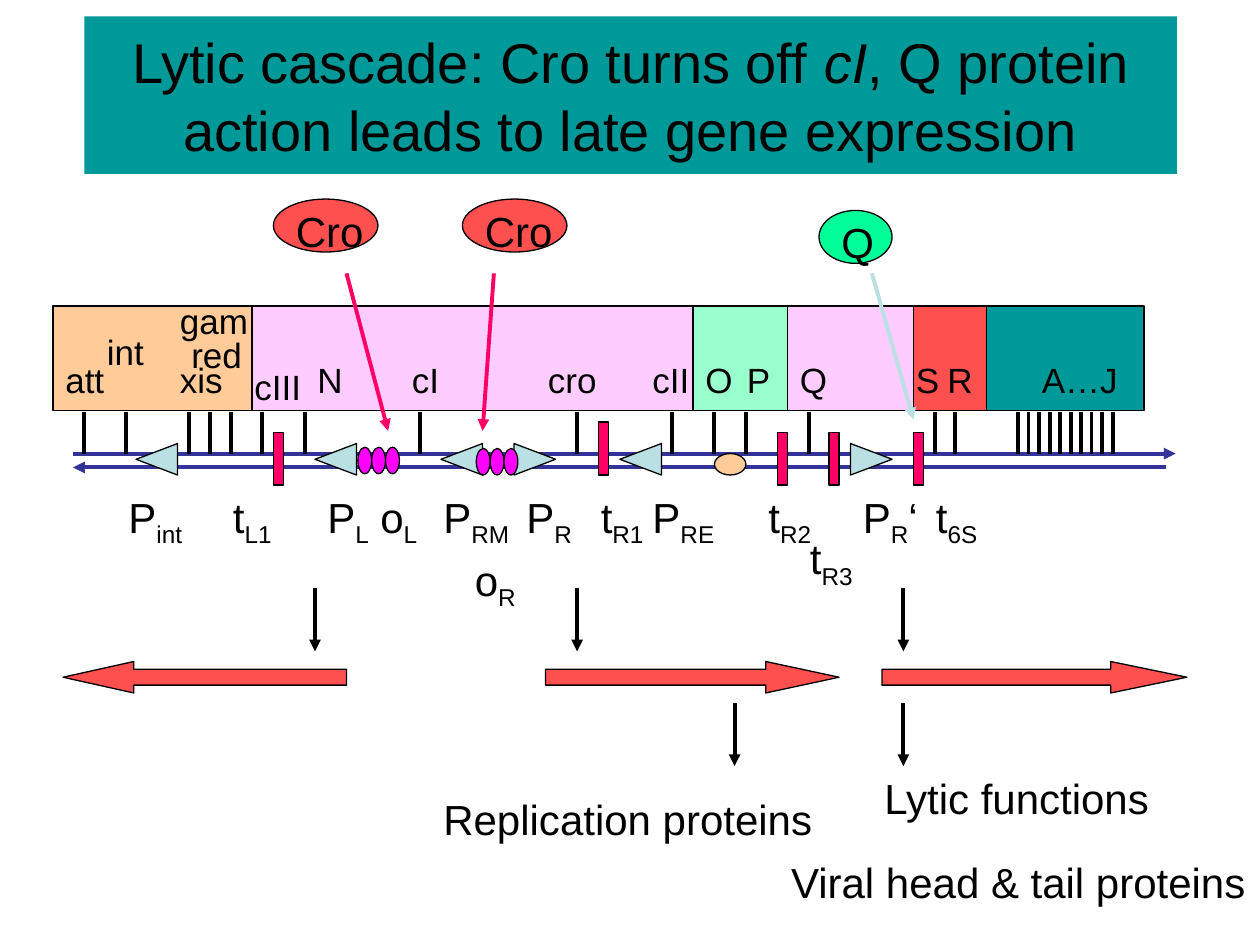
from dataclasses import dataclass

from lxml import etree
from pptx import Presentation
from pptx import util as u
from pptx.dml import color
from pptx.enum import shapes, text
from pptx.oxml import ns

COLORS = {
    "black": "000000", "teal": "009999", "pink": "FFCCFF", "mint": "99FFCC",
    "red": "FF5050", "peach": "FFCC99", "navy": "333399", "pale": "BBE0E3",
    "rose": "FF0066", "magenta": "FF00FF", "green": "00FF99",
}
FONT = "Arial"
SHAPE = shapes.MSO_SHAPE
STRAND_Y = 3.6
GENE_TOP, GENE_HEIGHT = 2.43, 0.83
GENE_SLACK = 0.02  # spare width that keeps each gene name on one line


@dataclass
class Label:
    left: float
    top: float
    width: float
    base: str
    sub: str = ""
    suffix: str = ""
    size: int = 24


@dataclass
class Block:
    left: float
    top: float
    width: float
    height: float
    fill: str
    kind: shapes.MSO_SHAPE = SHAPE.RECTANGLE
    rotation: int = 0
    outlined: bool = True


@dataclass
class Stroke:
    start: tuple[float, float]
    end: tuple[float, float]
    color: str = "black"
    arrow: bool = True


def rgb(name: str) -> color.RGBColor:
    return color.RGBColor.from_string(COLORS[name])


def add_span(para, words: str, size: int, baseline: int = 0, italic: bool = False) -> None:
    span = para.add_run()
    span.text = words
    span.font.name = FONT
    span.font.size = u.Pt(size)
    span.font.color.rgb = rgb("black")
    if italic:
        span.font.italic = True
    if baseline:
        span.font._element.set("baseline", str(baseline))


def draw_label(page, label: Label) -> None:
    height = 0.5 if label.size == 24 else 0.43
    box = page.shapes.add_textbox(u.Inches(label.left), u.Inches(label.top),
                                  u.Inches(label.width), u.Inches(height))
    frame = box.text_frame
    frame.word_wrap = False
    frame.auto_size = text.MSO_AUTO_SIZE.SHAPE_TO_FIT_TEXT
    para = frame.paragraphs[0]
    for words, baseline in ((label.base, 0), (label.sub, -25000), (label.suffix, 0)):
        if words:
            add_span(para, words, label.size, baseline)


def draw_block(page, block: Block):
    shape = page.shapes.add_shape(block.kind, u.Inches(block.left), u.Inches(block.top),
                                  u.Inches(block.width), u.Inches(block.height))
    shape.shadow.inherit = False
    shape.rotation = block.rotation
    shape.fill.solid()
    shape.fill.fore_color.rgb = rgb(block.fill)
    if block.outlined:
        shape.line.color.rgb = rgb("black")
        shape.line.width = u.Pt(0.75)
    else:
        shape.line.fill.background()
    return shape


def draw_stroke(page, stroke: Stroke) -> None:
    points = [u.Inches(value) for value in (*stroke.start, *stroke.end)]
    connector = page.shapes.add_connector(shapes.MSO_CONNECTOR.STRAIGHT, *points)
    connector.line.color.rgb = rgb(stroke.color)
    connector.line.width = u.Pt(2.25)
    if stroke.arrow:
        etree.SubElement(connector.line._get_or_add_ln(), ns.qn("a:tailEnd"), type="triangle")
    etree.SubElement(connector._element.spPr, ns.qn("a:effectLst"))


def draw_title(page) -> None:
    banner = draw_block(page, Block(0.67, 0.13, 8.67, 1.25, "teal", outlined=False))
    frame = banner.text_frame
    frame.word_wrap = True
    frame.vertical_anchor = text.MSO_ANCHOR.MIDDLE
    para = frame.paragraphs[0]
    para.alignment = text.PP_ALIGN.CENTER
    add_span(para, "Lytic cascade: Cro turns off ", 32)
    add_span(para, "cI", 32, italic=True)
    add_span(para, ", Q protein action leads to late gene expression", 32)


def draw_gene_map(page) -> None:
    # Gene regions, side by side
    edges = [0.42, 2, 5.5, 6.25, 7.25, 7.83, 9.08]
    fills = ["peach", "pink", "mint", "pink", "red", "teal"]
    for left, right, fill in zip(edges, edges[1:], fills):
        draw_block(page, Block(left, GENE_TOP, right - left, GENE_HEIGHT, fill))

    # The two DNA strands
    draw_stroke(page, Stroke((0.58, STRAND_Y), (9.33, STRAND_Y), "navy"))
    draw_stroke(page, Stroke((9.25, 3.71), (0.58, 3.71), "navy"))

    # Promoters, pointing right (90) or left (270)
    promoters = {4.12: 90, 6.79: 90, 2.54: 270, 3.54: 270, 1.12: 270, 4.96: 270}
    for left, rotation in promoters.items():
        draw_block(page, Block(left, 3.48, 0.25, 0.33, "pale",
                               SHAPE.ISOSCELES_TRIANGLE, rotation))

    # Terminators
    for left, top in ((4.75, 3.35), (2.17, 3.43), (6.17, 3.43), (6.58, 3.43), (7.25, 3.43)):
        draw_block(page, Block(left, top, 0.08, 0.42, "rose"))

    # Operators, three sites each, and the replication origin
    for first, top in ((2.84, 3.55), (3.78, 3.56)):
        for site in range(3):
            draw_block(page, Block(first + site * 0.11, top, 0.11, 0.21,
                                   "magenta", SHAPE.OVAL))
    draw_block(page, Block(5.67, STRAND_Y, 0.25, 0.17, "peach", SHAPE.OVAL))

    # Ticks from genes to strand; the late genes are evenly spaced
    ticks = [0.67, 1, 1.5, 1.67, 1.83, 2.08, 2.42, 3.33, 4.58, 5.33, 5.67, 5.92,
             6.42, 7.42, 7.58] + [8.08 + step / 12 for step in range(10)]
    for x in ticks:
        draw_stroke(page, Stroke((x, STRAND_Y), (x, 3.27), arrow=False))


GENE_ROW = 2.8
GENES = [
    (0.42, GENE_ROW, 0.51, "att"), (0.75, 2.57, 0.49, "int"), (1.33, GENE_ROW, 0.54, "xis"),
    (1.42, 2.6, 0.6, "red"), (1.33, 2.33, 0.74, "gam"), (1.92, 2.85, 0.57, "cIII"),
    (2.42, GENE_ROW, 0.4, "N"), (3.17, GENE_ROW, 0.42, "cI"), (4.25, GENE_ROW, 0.59, "cro"),
    (5.08, GENE_ROW, 0.49, "cII"), (5.5, GENE_ROW, 0.42, "O"), (5.83, GENE_ROW, 0.39, "P"),
    (6.25, GENE_ROW, 0.42, "Q"), (7.17, GENE_ROW, 0.39, "S"), (7.42, GENE_ROW, 0.4, "R"),
    (8.17, GENE_ROW, 0.8, "A…J"),
]
SITE_ROW = 3.85
SITES = [
    Label(0.92, SITE_ROW, 0.75, "P", "int"), Label(1.75, SITE_ROW, 0.63, "t", "L1"),
    Label(2.5, SITE_ROW, 0.64, "P", "L"), Label(2.92, SITE_ROW, 0.6, "o", "L"),
    Label(3.42, SITE_ROW, 0.86, "P", "RM"), Label(3.67, 4.35, 0.64, "o", "R"),
    Label(4.08, SITE_ROW, 0.68, "P", "R"), Label(4.67, SITE_ROW, 0.67, "t", "R1"),
    Label(5.08, SITE_ROW, 0.82, "P", "RE"), Label(6, SITE_ROW, 0.67, "t", "R2"),
    Label(6.33, 4.18, 0.67, "t", "R3"), Label(6.75, SITE_ROW, 0.66, "P", "R", "‘"),
    Label(7.33, SITE_ROW, 0.66, "t", "6S"),
]
PRODUCTS = [
    Label(6.92, 6.08, 2.31, "Lytic functions"),
    Label(3.42, 6.25, 3.13, "Replication proteins"),
    Label(6.18, 6.75, 3.82, "Viral head & tail proteins"),
]


def draw_proteins(page) -> None:
    for left, top, width, fill, label_width, name in (
            (2.17, 1.58, 0.83, "red", 0.74, "Cro"), (3.67, 1.58, 0.83, "red", 0.74, "Cro"),
            (6.5, 1.67, 0.58, "green", 0.46, "Q")):
        draw_block(page, Block(left, top, width, 0.42, fill, SHAPE.OVAL))
        draw_label(page, Label(left + 0.08, top, label_width, name))
    for stroke in (Stroke((6.92, 2.17), (7.25, 3.33), "pale"),
                   Stroke((3.92, 2.17), (3.83, 3.42), "rose"),
                   Stroke((2.75, 2.17), (3.08, 3.42), "rose")):
        draw_stroke(page, stroke)


def draw_transcripts(page) -> None:
    height = 0.25
    for left, width, kind in ((0.5, 2.25, SHAPE.LEFT_ARROW), (4.33, 2.33, SHAPE.RIGHT_ARROW),
                              (7, 2.42, SHAPE.RIGHT_ARROW)):
        arrow = draw_block(page, Block(left, 5.25, width, height, "red", kind))
        arrow.adjustments[1] = width / 4 / height  # head is a quarter of the length
    for x, top in ((2.5, 4.67), (4.58, 4.67), (7.17, 4.67), (5.83, 5.58), (7.17, 5.58)):
        draw_stroke(page, Stroke((x, top), (x, top + 0.5)))


def main() -> None:
    deck = Presentation()
    deck.slide_width, deck.slide_height = u.Inches(10), u.Inches(7.5)
    page = deck.slides.add_slide(deck.slide_layouts[6])
    draw_title(page)
    draw_gene_map(page)
    for left, top, width, name in GENES:
        draw_label(page, Label(left, top, width + GENE_SLACK, name, size=20))
    draw_proteins(page)
    draw_transcripts(page)
    for label in SITES + PRODUCTS:
        draw_label(page, label)
    deck.save("out.pptx")


if __name__ == "__main__":
    main()
